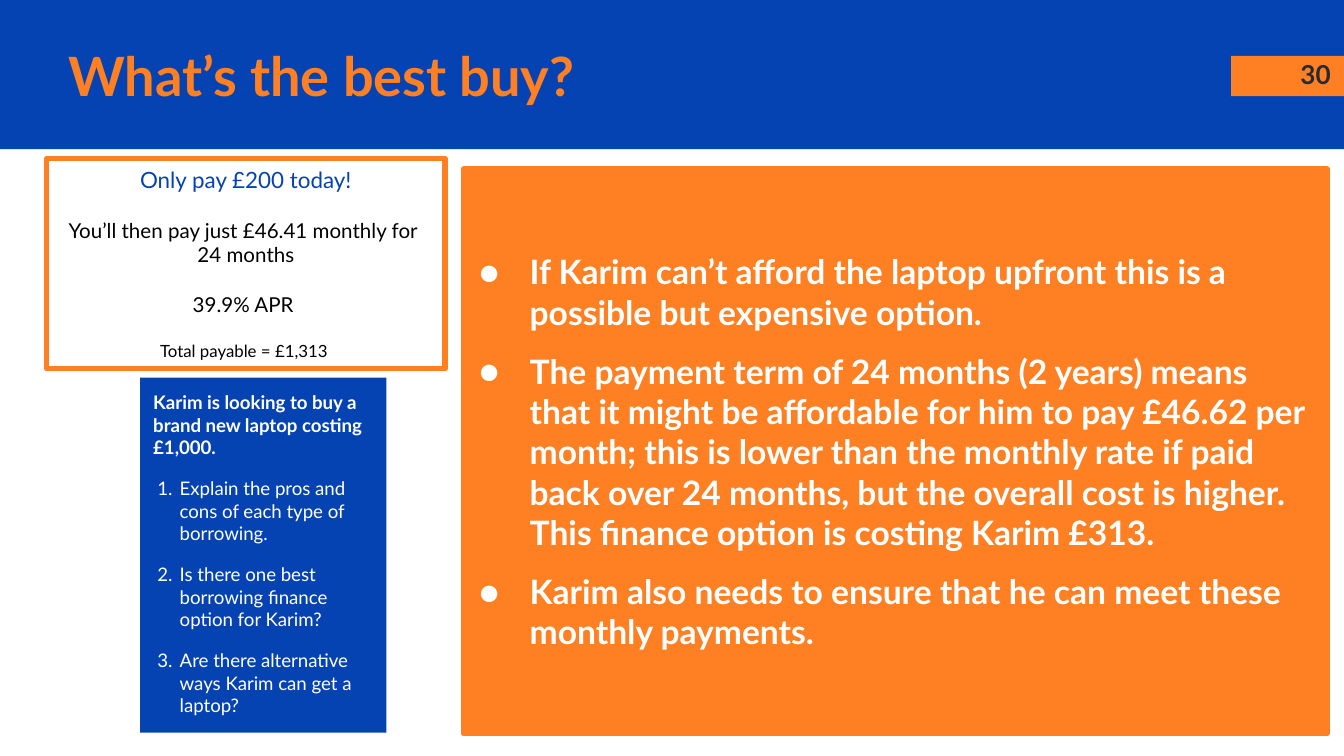
from pptx import Presentation
from pptx.util import Pt
from pptx.dml.color import RGBColor as RGB
from pptx.enum.shapes import MSO_SHAPE as Kind
from pptx.enum.text import MSO_ANCHOR as Anchor, PP_ALIGN as Align
from pptx.oxml.ns import qn
from lxml.etree import SubElement as Sub

BLUE = RGB(0x05, 0x43, 0xB3)
ORANGE = RGB(0xFF, 0x80, 0x22)
WHITE = RGB(0xFF, 0xFF, 0xFF)
BLACK = RGB(0, 0, 0)
DARK = RGB(0x26, 0x2A, 0x33)
FACE = "Lato"
PAD = 7.2

OFFER = [
    ("Only pay £200 today!", 12, BLUE, 0),
    ("You’ll then pay just £46.41 monthly for ", 11, BLACK, 13.2),
    ("24 months", 11, BLACK, 0),
    ("39.9% APR ", 11, BLACK, 13.2),
    ("Total payable = £1,313 ", 9, BLACK, 13.2),
]
TASK = "Karim is looking to buy a brand new laptop costing £1,000."
ASKS = [
    "Explain the pros and cons of each type of borrowing.",
    "Is there one best borrowing finance option for Karim?",
    "Are there alternative ways Karim can get a laptop?",
]
NOTES = [
    "If Karim can’t afford the laptop upfront this is a possible but "
    "expensive option.",
    "The payment term of 24 months (2 years) means that it might be "
    "affordable for him to pay £46.62 per month; this is lower than the "
    "monthly rate if paid back over 24 months, but the overall cost is "
    "higher. This finance option is costing Karim £313.",
    "Karim also needs to ensure that he can meet these monthly payments.",
]


def set_frame(shape, anchor):
    frame = shape.text_frame
    frame.word_wrap = True
    frame.vertical_anchor = anchor
    frame.margin_left = frame.margin_right = Pt(PAD)
    frame.margin_top = frame.margin_bottom = Pt(PAD)
    return frame


def add_rect(slide, box, fill, line=None, anchor=Anchor.MIDDLE):
    shape = slide.shapes.add_shape(Kind.RECTANGLE, *map(Pt, box))
    shape.shadow.inherit = False
    shape.fill.solid()
    shape.fill.fore_color.rgb = fill
    if line is None:
        shape.line.fill.background()
    else:
        shape.line.color.rgb = line
        shape.line.width = Pt(3)
    return set_frame(shape, anchor)


def add_text(slide, box, anchor):
    return set_frame(slide.shapes.add_textbox(*map(Pt, box)), anchor)


def add_para(frame, text, size, color, bold=False, align=Align.LEFT,
             gap=0, mark=None, left=0, hang=0):
    first = frame.paragraphs[0]
    para = frame.add_paragraph() if first.runs else first
    para.alignment = align
    if gap and para is not first:
        para.space_before = Pt(gap)
    if mark:
        props = para._p.get_or_add_pPr()
        props.set("marL", str(Pt(left)))
        props.set("indent", str(-Pt(hang)))
        tint = Sub(props, qn("a:buClr"))
        Sub(tint, qn("a:srgbClr"), val=str(color))
        Sub(props, qn("a:buFont"), typeface=FACE)
        if mark == "1.":
            Sub(props, qn("a:buAutoNum"), type="arabicPeriod")
        else:
            Sub(props, qn("a:buChar"), char=mark)
    run = para.add_run()
    run.text = text
    font = run.font
    font.name, font.size, font.bold = FACE, Pt(size), bold
    font.color.rgb = color


def add_header(slide, box):
    x, y, w, h = box
    add_rect(slide, box, BLUE)
    # Page number on its tab
    add_rect(slide, (x + w - 60.5, y + 30, 60.5, 21.6), ORANGE)
    page = add_text(slide, (x + w - 43.2, y + 24, 43.2, 31), Anchor.TOP)
    add_para(page, "30", 14, DARK, True, Align.RIGHT)
    # Title
    title = add_text(slide, (x + 29.5, y + 20, 564, 40.5), Anchor.MIDDLE)
    add_para(title, "What’s the best buy?", 29, ORANGE, True)


def add_offer(slide, box):
    frame = add_rect(slide, box, WHITE, ORANGE)
    for text, size, color, gap in OFFER:
        add_para(frame, text, size, color, align=Align.CENTER, gap=gap)


def add_notes(slide, box):
    frame = add_rect(slide, box, ORANGE, ORANGE)
    for text in NOTES:
        add_para(frame, text, 18, WHITE, True, gap=10,
                 mark="●", left=28.3, hang=27)


def add_task(slide, box):
    frame = add_rect(slide, box, BLUE, anchor=Anchor.TOP)
    add_para(frame, TASK, 10, WHITE, True)
    for text in ASKS:
        add_para(frame, text, 10, WHITE, gap=10,
                 mark="1.", left=14.2, hang=12)


def main():
    deck = Presentation()
    deck.slide_width, deck.slide_height = Pt(720), Pt(405)
    slide = deck.slides.add_slide(deck.slide_layouts[6])
    add_header(slide, (0, 0, 720, 80))
    add_offer(slide, (25, 85, 213.5, 112.5))
    add_notes(slide, (248.4, 90.7, 462.5, 302.4))
    add_task(slide, (75, 202.4, 132, 190.2))
    deck.save("out.pptx")


if __name__ == "__main__":
    main()
